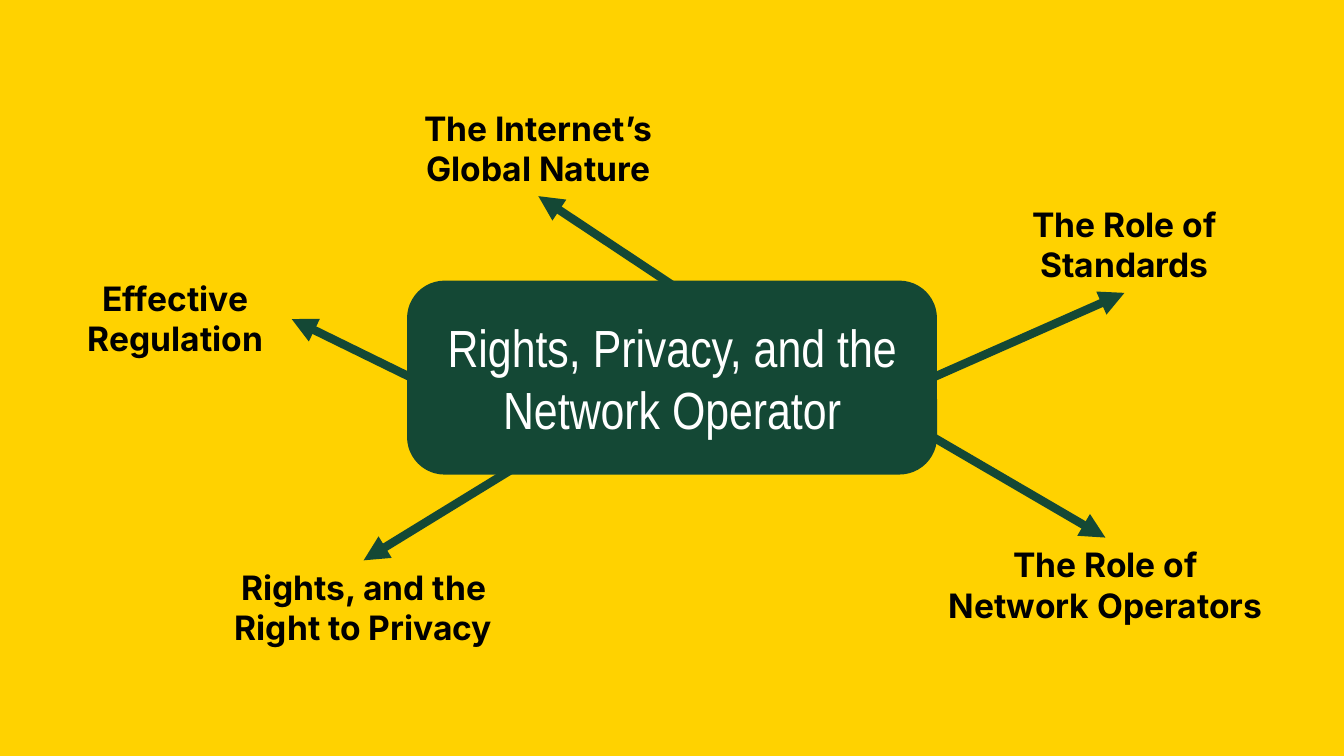
from lxml.etree import SubElement
from pptx import Presentation
from pptx.dml.color import RGBColor
from pptx.enum.shapes import MSO_CONNECTOR, MSO_SHAPE
from pptx.enum.text import MSO_ANCHOR, MSO_AUTO_SIZE, PP_ALIGN
from pptx.oxml.ns import qn
from pptx.util import Pt

COLORS = {name: RGBColor.from_string(value) for name, value in {
    "yellow": "FFD200", "green": "144835", "white": "FFFFFF", "black": "000000",
}.items()}
HUB_FONT = {"name": "Arial Narrow", "size": Pt(28), "bold": False}
TOPIC_FONT = {"name": "Inter", "size": Pt(18), "bold": True}
STROKE = Pt(4.5)

HUB_BOX = (220.3, 152.6, 279.4, 99.4)
TOPIC_HEIGHT = 51.1
# Topic, left, top, width, arrow start as a share of the hub, arrow end as a share of the topic
TOPICS = [
    ("The Internet’s Global Nature", 211, 54, 154.8, (0.5, 0), (0.5, 1)),
    ("The Role of Standards", 525, 105.8, 154.8, (1, 0.5), (0.5, 1)),
    ("The Role of Network Operators", 499.7, 288, 185, (1, 0.82), (0.5, 0)),
    ("Rights, and the Right to Privacy", 117.4, 300.2, 154.8, (0.19, 1), (0.5, 0)),
    ("Effective Regulation", 31.7, 145.4, 124.6, (0, 0.5), (1, 0.5)),
]


def point_in(box, share):
    left, top, width, height = box
    return Pt(left + width * share[0]), Pt(top + height * share[1])


def write_centered(frame, text, font_format, color):
    frame.word_wrap = True
    paragraph = frame.paragraphs[0]
    paragraph.alignment = PP_ALIGN.CENTER
    run = paragraph.add_run()
    run.text = text
    for attribute, value in font_format.items():
        setattr(run.font, attribute, value)
    run.font.color.rgb = COLORS[color]


def add_hub(slide, box, text):
    hub = slide.shapes.add_shape(MSO_SHAPE.ROUNDED_RECTANGLE, *map(Pt, box))
    hub.adjustments[0] = 0.18
    hub.shadow.inherit = False
    hub.fill.solid()
    hub.fill.fore_color.rgb = COLORS["green"]
    hub.line.color.rgb = COLORS["green"]
    hub.line.width = STROKE
    hub.text_frame.vertical_anchor = MSO_ANCHOR.MIDDLE
    write_centered(hub.text_frame, text, HUB_FONT, "white")


def add_topic(slide, box, text):
    topic = slide.shapes.add_textbox(*map(Pt, box))
    write_centered(topic.text_frame, text, TOPIC_FONT, "black")
    topic.text_frame.auto_size = MSO_AUTO_SIZE.SHAPE_TO_FIT_TEXT


def add_arrow(slide, start, end):
    arrow = slide.shapes.add_connector(MSO_CONNECTOR.STRAIGHT, *start, *end)
    arrow.line.color.rgb = COLORS["green"]
    arrow.line.width = STROKE
    properties = arrow._element.spPr
    SubElement(properties.find(qn("a:ln")), qn("a:tailEnd"), type="triangle")
    SubElement(properties, qn("a:effectLst"))


def build_mind_map(slide):
    # Central theme
    add_hub(slide, HUB_BOX, "Rights, Privacy, and the Network Operator")
    # Topics, each with its arrow from the hub
    for text, left, top, width, hub_share, topic_share in TOPICS:
        box = (left, top, width, TOPIC_HEIGHT)
        add_topic(slide, box, text)
        add_arrow(slide, point_in(HUB_BOX, hub_share), point_in(box, topic_share))


def main():
    deck = Presentation()
    deck.slide_width, deck.slide_height = Pt(720), Pt(405)
    slide = deck.slides.add_slide(deck.slide_layouts[6])
    slide.background.fill.solid()
    slide.background.fill.fore_color.rgb = COLORS["yellow"]
    build_mind_map(slide)
    deck.save("out.pptx")


if __name__ == "__main__":
    main()
